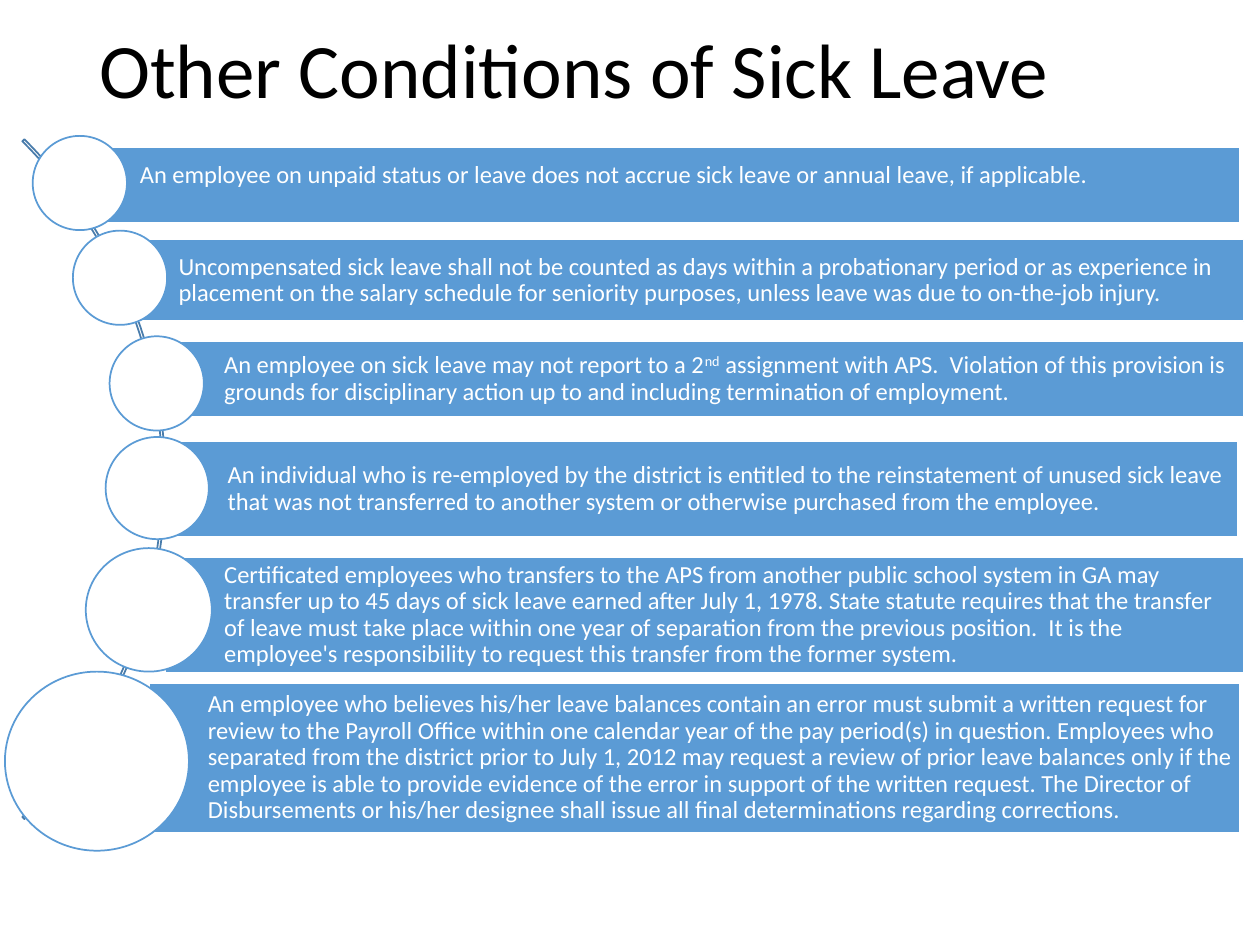
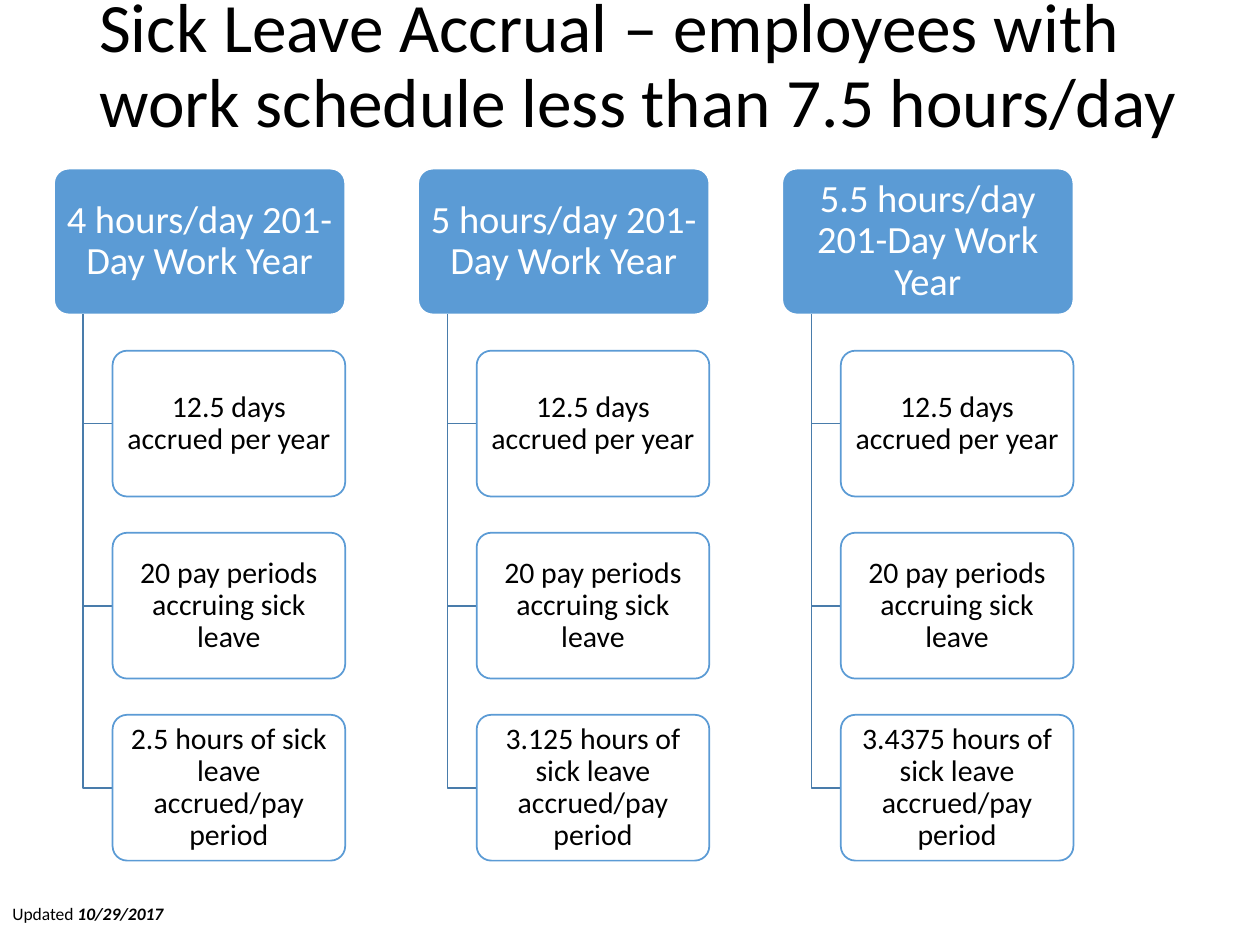
from lxml import etree
from pptx import Presentation
from pptx.dml.color import RGBColor
from pptx.enum.shapes import MSO_SHAPE
from pptx.enum.text import MSO_ANCHOR, PP_ALIGN
from pptx.oxml.ns import qn
from pptx.util import Cm, Pt

RECTANGLE, ROUNDED = MSO_SHAPE.RECTANGLE, MSO_SHAPE.ROUNDED_RECTANGLE
OVAL, ARC = MSO_SHAPE.OVAL, MSO_SHAPE.BLOCK_ARC
TOP, MIDDLE = MSO_ANCHOR.TOP, MSO_ANCHOR.MIDDLE
LEFT, CENTER = PP_ALIGN.LEFT, PP_ALIGN.CENTER

COLORS = {"blue": "5B9BD5", "rule": "497CAB", "white": "FFFFFF", "black": "000000"}
DEFAULT_INSETS = (0.25, 0.13, 0.25, 0.13)

CONDITIONS = [
    ((1.63, 2.97, 23.37, 1.52), (0.66, 2.74, 1.9, 1.9),
     ["An employee on unpaid status or leave does not accrue sick leave or annual leave, "
      "if applicable."]),
    ((2.41, 4.83, 22.66, 1.65), (1.47, 4.65, 1.9, 1.9),
     ["Uncompensated sick leave shall not be counted as days within a probationary period or "
      "as experience in placement on the salary schedule for seniority purposes, unless leave "
      "was due to on-the-job injury."]),
    ((3.33, 6.88, 21.74, 1.52), (2.21, 6.78, 1.9, 1.9),
     ["An employee on sick leave may not report to a 2", "nd",
      " assignment with APS.  Violation of this provision is grounds for disciplinary action "
      "up to and including termination of employment."]),
    ((3.4, 8.89, 21.56, 1.93), (2.13, 8.81, 2.08, 2.06),
     ["An individual who is re-employed by the district is entitled to the reinstatement of "
      "unused sick leave that was not transferred to another system or otherwise purchased "
      "from the employee."]),
    ((3.33, 11.23, 21.74, 2.34), (1.73, 11.05, 2.54, 2.49),
     ["Certificated employees who transfers to the APS from another public school system in "
      "GA may transfer up to 45 days of sick leave earned after July 1, 1978. State statute "
      "requires that the transfer of leave must take place within one year of separation from "
      "the previous position.  It is the employee's responsibility to request this transfer "
      "from the former system."]),
    ((3, 13.77, 22, 3.02), (0.1, 13.54, 3.71, 3.61),
     ["An employee who believes his/her leave balances contain an error must submit a written "
      "request for review to the Payroll Office within one calendar year of the pay period(s) "
      "in question. Employees who separated from the district prior to July 1, 2012 may "
      "request a review of prior leave balances only if the employee is able to provide "
      "evidence of the error in support of the written request. The Director of Disbursements "
      "or his/her designee shall issue all final determinations regarding corrections."]),
]

SCHEDULES = [("4", "2.5"), ("5", "3.125"), ("5.5", "3.4375")]


class LeaveDeck:
    """Holds the deck style and the current slide, and draws each kind of element."""

    font_name = "Calibri"

    def __init__(self):
        self.deck = Presentation()
        self.deck.slide_width, self.deck.slide_height = Cm(25.4), Cm(19.05)
        self.page = None

    def color(self, name):
        return RGBColor.from_string(COLORS[name])

    def new_page(self, title, area, size):
        self.page = self.deck.slides.add_slide(self.deck.slide_layouts[6])
        self.text(area, [title], size, anchor=MIDDLE, spacing=0.9)

    def set_text(self, box, spans, size, color, insets, anchor, align=LEFT, spacing=0.9):
        frame = box.text_frame
        frame.word_wrap = True
        frame.vertical_anchor = anchor
        (frame.margin_left, frame.margin_top,
         frame.margin_right, frame.margin_bottom) = map(Cm, insets)
        para = frame.paragraphs[0]
        para.text = spans[0]
        for extra in spans[1:]:
            para.add_run().text = extra
        para.alignment = align
        para.line_spacing = spacing
        for span in para.runs:
            span.font.name = self.font_name
            span.font.size = Pt(size)
            span.font.color.rgb = self.color(color)
        return para

    def text(self, area, spans, size, anchor=TOP, spacing=1.0):
        box = self.page.shapes.add_textbox(*map(Cm, area))
        return self.set_text(box, spans, size, "black", DEFAULT_INSETS, anchor, spacing=spacing)

    def finish(self, shape, fill, line):
        shape.shadow.inherit = False
        if fill:
            shape.fill.solid()
            shape.fill.fore_color.rgb = self.color(fill)
        else:
            shape.fill.background()
        shape.line.color.rgb = self.color(line)
        shape.line.width = Pt(1)

    def shape(self, kind, area, fill, line, adjustments=()):
        shape = self.page.shapes.add_shape(kind, *map(Cm, area))
        for index, value in enumerate(adjustments):
            shape.adjustments[index] = value
        self.finish(shape, fill, line)
        return shape

    def bar(self, area, spans, bottom_inset):
        box = self.shape(RECTANGLE, area, "blue", "white")
        return self.set_text(box, spans, 14, "white", (1.19, 0.1, 0.1, bottom_inset), MIDDLE)

    def header(self, area, label):
        box = self.shape(ROUNDED, area, "blue", "white", [0.1])
        self.set_text(box, [label], 22, "white", (0.13, 0.08, 0.13, 0.08), MIDDLE, CENTER)

    def card(self, area, label):
        box = self.shape(ROUNDED, area, "white", "blue", [0.1])
        tint = box._element.spPr.find(qn("a:solidFill"))[0]
        etree.SubElement(tint, qn("a:alpha")).set("val", "90000")
        self.set_text(box, [label], 17, "black", (0.1, 0.05, 0.1, 0.05), MIDDLE, CENTER)

    def elbow(self, left, top, right, bottom):
        builder = self.page.shapes.build_freeform(Cm(left), Cm(top))
        builder.add_line_segments([(Cm(left), Cm(bottom)), (Cm(right), Cm(bottom))], close=False)
        self.finish(builder.convert_to_shape(), None, "rule")


def add_conditions(leave):
    leave.new_page("Other Conditions of Sick Leave", (1.75, 0.43, 21.9, 2.11), 44)
    leave.shape(ARC, (-16.05, -0.03, 19.38, 19.38), None, "rule", [189, 27, 0.003])
    for index, (bar_area, circle_area, spans) in enumerate(CONDITIONS):
        para = leave.bar(bar_area, spans, 0.1 if index else 0.46)
        for span in para.runs:
            if span.text == "nd":
                span.font._element.set("baseline", "30000")
        leave.shape(OVAL, circle_area, "white", "blue")


def add_accrual(leave):
    leave.new_page("Sick Leave Accrual – employees with work schedule less than 7.5 hours/day",
                   (1.75, 0.2, 22.61, 2.34), 39.6)
    header_top, height = 3.4, 2.94
    for column, (hours, accrued) in enumerate(SCHEDULES):
        left = 1.09 + column * 7.34
        leave.header((left, header_top, 5.87, height), f"{hours} hours/day 201-Day Work Year")
        labels = ["12.5 days accrued per year", "20 pay periods accruing sick leave",
                  f"{accrued} hours of sick leave accrued/pay period"]
        for row, label in enumerate(labels, start=1):
            top = header_top + row * 3.67
            card_left = left + 1.18
            leave.elbow(left + 0.59, header_top + height, card_left, top + height / 2)
            leave.card((card_left, top, 4.69, height), label)
    date = leave.text((0, 18.08, 4.11, 0.69), ["Updated ", "10/29/2017"], 10).runs[1]
    date.font.bold = date.font.italic = True


def main():
    leave = LeaveDeck()
    add_conditions(leave)
    add_accrual(leave)
    leave.deck.save("out.pptx")


if __name__ == "__main__":
    main()
